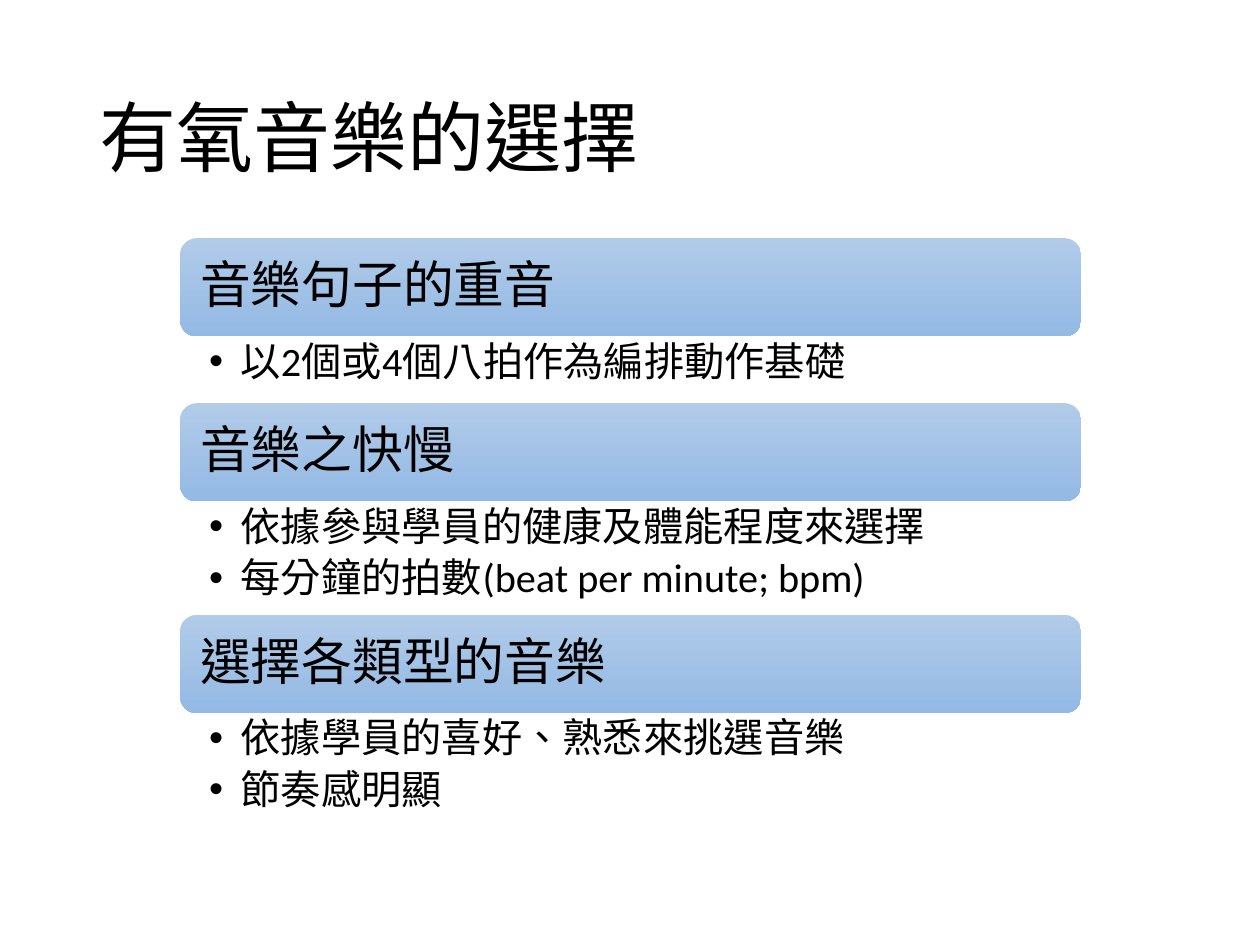
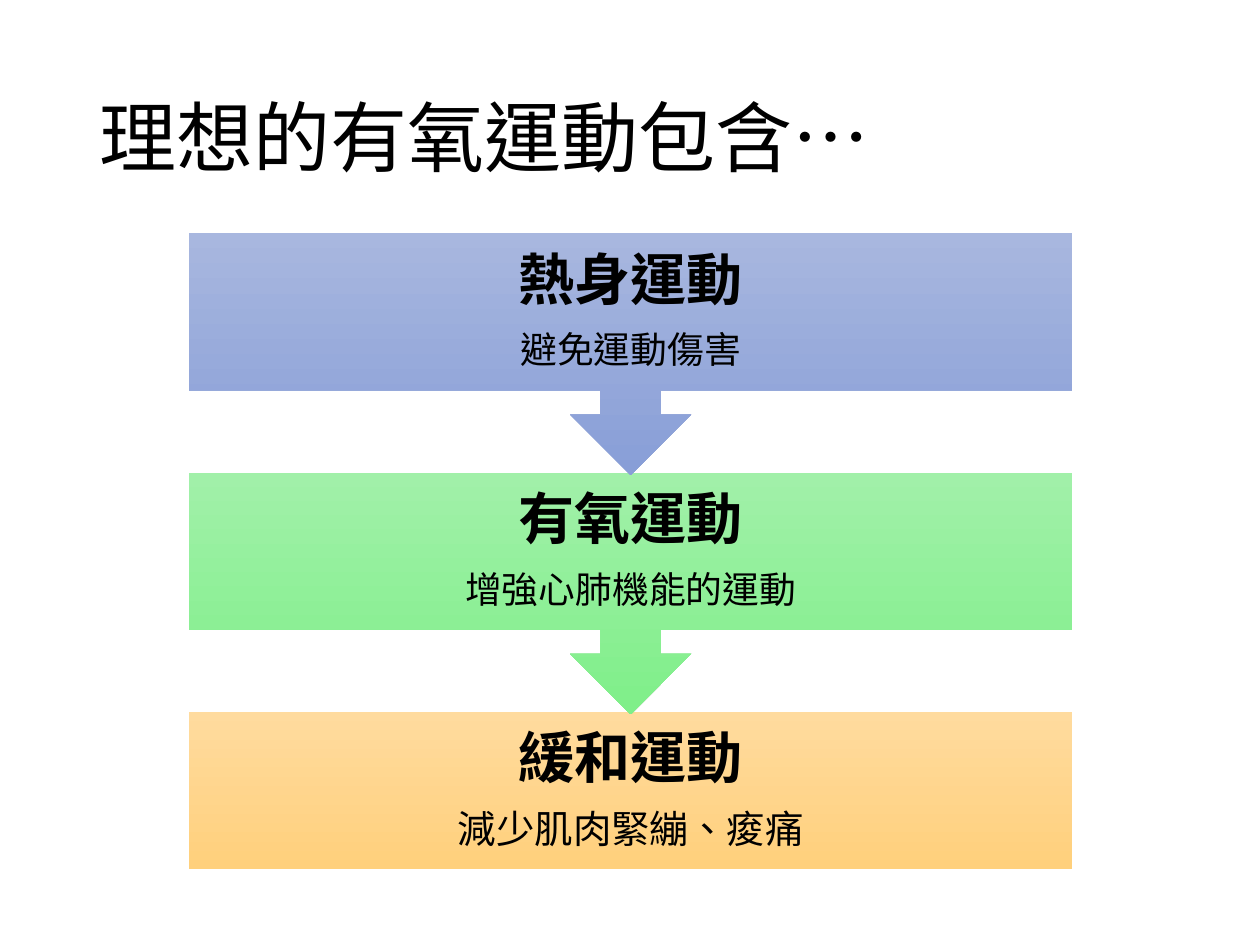
from dataclasses import dataclass

from lxml.etree import SubElement
from pptx import Presentation
from pptx.dml.color import RGBColor
from pptx.enum.lang import MSO_LANGUAGE_ID as Language
from pptx.enum.shapes import MSO_SHAPE as Shape
from pptx.enum.text import MSO_ANCHOR as Anchor, PP_ALIGN as Align
from pptx.oxml.ns import qn
from pptx.util import Inches, Pt


@dataclass(frozen=True)
class Theme:
    """Colours, font and type sizes shared by the slides."""

    font: str = "Calibri"
    text: str = "000000"
    blue: tuple = ("B1CBE9", "93B9E4")
    indigo: tuple = ("A8B7DF", "889ED7")
    green: tuple = ("A1F0A9", "7FEF89")
    orange: tuple = ("FFDB9E", "FFD07C")
    title_size: int = 44
    heading_size: int = 29
    bullet_size: int = 23
    stage_size: int = 32
    detail_size: int = 21
    last_detail_size: int = 22


THEME = Theme()
TITLE_BOX = (0.69, 0.4, 8.62, 1.45)
TOPICS = [
    ("音樂句子的重音", ["以2個或4個八拍作為編排動作基礎"], 0.53),
    ("音樂之快慢", ["依據參與學員的健康及體能程度來選擇",
               "每分鐘的拍數(beat per minute; bpm)"], 0.9),
    ("選擇各類型的音樂", ["依據學員的喜好、熟悉來挑選音樂", "節奏感明顯"], 0.9),
]
STAGES = [
    ("熱身運動", "避免運動傷害", THEME.indigo, THEME.detail_size),
    ("有氧運動", "增強心肺機能的運動", THEME.green, THEME.detail_size),
    ("緩和運動", "減少肌肉緊繃、痠痛", THEME.orange, THEME.last_detail_size),
]


def style_paragraph(paragraph, size, align=Align.LEFT, bold=False, after=0):
    """Format a paragraph, with the space after it in percent."""
    paragraph.alignment = align
    paragraph.line_spacing = 0.9
    if after:
        spacing = SubElement(paragraph._p.get_or_add_pPr(), qn("a:spcAft"))
        SubElement(spacing, qn("a:spcPct")).set("val", str(after * 1000))
    for run in paragraph.runs:
        font = run.font
        font.name, font.size, font.bold = THEME.font, Pt(size), bold
        font.color.rgb = RGBColor.from_string(THEME.text)
        font.language_id = Language.TRADITIONAL_CHINESE


def add_bullet(paragraph):
    """Give a paragraph a hanging round bullet."""
    properties = paragraph._p.get_or_add_pPr()
    properties.set("marL", str(Inches(0.25)))
    properties.set("indent", str(Inches(-0.25)))
    SubElement(properties, qn("a:buFont")).set("typeface", "Arial")
    SubElement(properties, qn("a:buChar")).set("char", "•")


def set_frame(frame, anchor, horizontal, vertical):
    """Set wrapping, anchor and insets of a text frame."""
    frame.word_wrap = True
    frame.vertical_anchor = anchor
    frame.margin_left = frame.margin_right = Inches(horizontal)
    frame.margin_top = frame.margin_bottom = Inches(vertical)


def add_panel(slide, kind, box, colours, inset):
    """Add a borderless shape shaded from top to bottom."""
    panel = slide.shapes.add_shape(kind, *map(Inches, box))
    panel.shadow.inherit = False
    panel.line.fill.background()
    panel.fill.gradient()
    panel.fill.gradient_angle = 270
    for stop, colour in zip(panel.fill.gradient_stops, colours):
        stop.color.rgb = RGBColor.from_string(colour)
    set_frame(panel.text_frame, Anchor.MIDDLE, inset, inset)
    return panel


def add_titled_slide(presentation, text):
    """Add a title-only slide and place its title."""
    slide = presentation.slides.add_slide(presentation.slide_layouts[5])
    title = slide.shapes.title
    title.left, title.top, title.width, title.height = map(Inches, TITLE_BOX)
    title.text_frame.text = text
    set_frame(title.text_frame, Anchor.MIDDLE, 0.1, 0.05)
    style_paragraph(title.text_frame.paragraphs[0], THEME.title_size)
    return slide


def add_topic_list(slide, box, topics, heading_height=0.78):
    """Stack heading bars, each followed by its bullets."""
    left, top, width = box
    for heading, bullets, bullets_height in topics:
        bar = add_panel(slide, Shape.ROUNDED_RECTANGLE,
                        (left, top, width, heading_height), THEME.blue, 0.12)
        bar.text_frame.text = heading
        style_paragraph(bar.text_frame.paragraphs[0], THEME.heading_size, after=35)
        top += heading_height
        area = (left, top, width, bullets_height)
        frame = slide.shapes.add_textbox(*map(Inches, area)).text_frame
        set_frame(frame, Anchor.TOP, 0.23, 0.04)
        frame.text = "\n".join(bullets)
        for paragraph in frame.paragraphs:
            style_paragraph(paragraph, THEME.bullet_size, after=20)
            add_bullet(paragraph)
        top += bullets_height


def add_stage_flow(slide, box, stages, pitch=1.9, body=1.25, callout=1.92):
    """Stack stages from the bottom up, all but the last pointing down."""
    left, top, width = box
    last = len(stages) - 1
    for index, (name, detail, colours, detail_size) in reversed(list(enumerate(stages))):
        kind, height = ((Shape.RECTANGLE, body) if index == last
                        else (Shape.DOWN_ARROW_CALLOUT, callout))
        stage = add_panel(slide, kind, (left, top + index * pitch, width, height),
                          colours, 0.25)
        stage.text_frame.text = f"{name}\n{detail}"
        name_line, detail_line = stage.text_frame.paragraphs
        style_paragraph(name_line, THEME.stage_size, Align.CENTER, True, 35)
        style_paragraph(detail_line, detail_size, Align.CENTER, after=35)


def main():
    """Build and save the presentation."""
    presentation = Presentation()
    presentation.slide_width, presentation.slide_height = Inches(10), Inches(7.5)
    add_topic_list(add_titled_slide(presentation, "有氧音樂的選擇"),
                   (1.43, 1.89, 7.15), TOPICS)
    add_stage_flow(add_titled_slide(presentation, "理想的有氧運動包含…"),
                   (1.5, 1.85, 7.01), STAGES)
    presentation.save("out.pptx")


if __name__ == "__main__":
    main()
